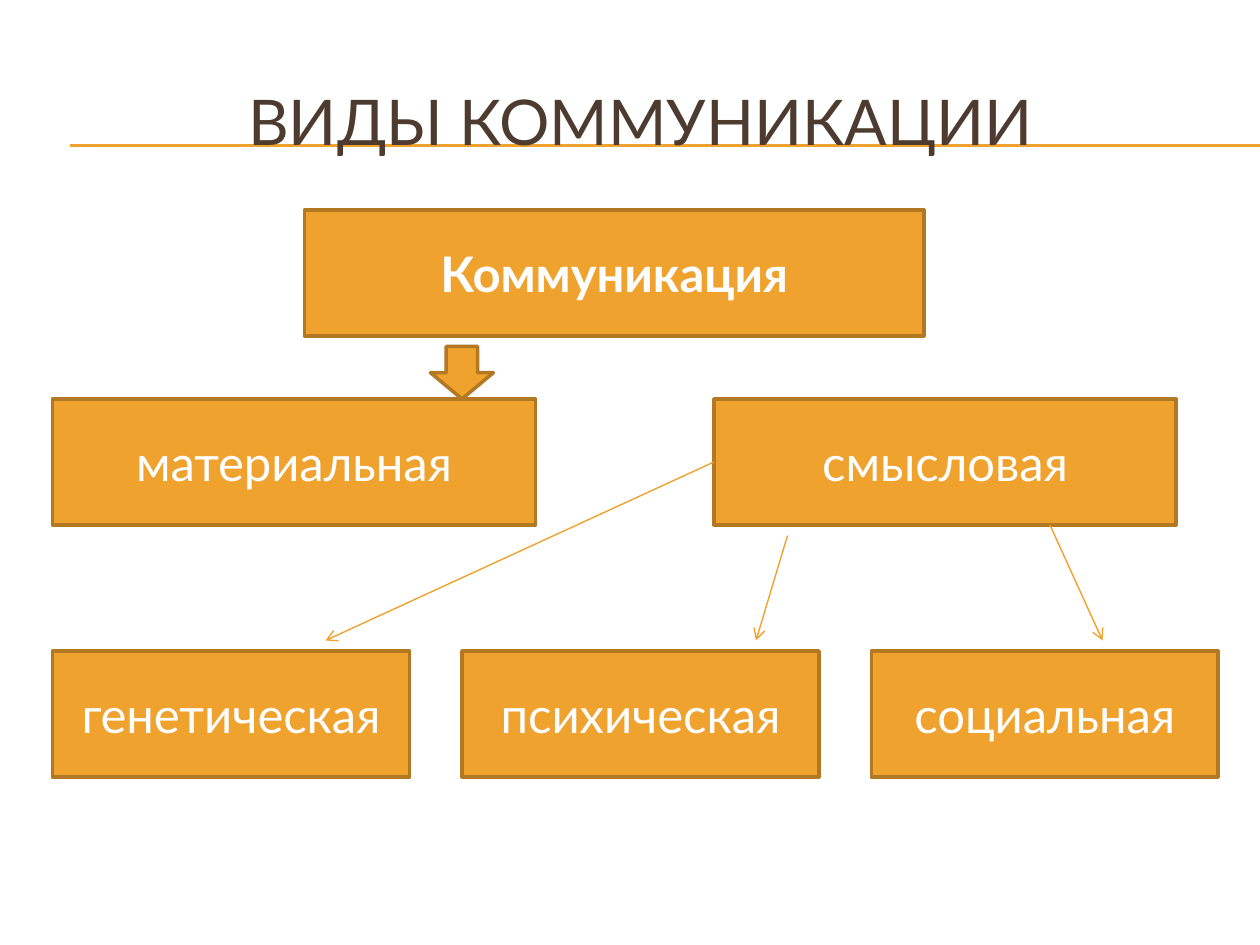
from dataclasses import dataclass

from lxml import etree
from pptx import Presentation
from pptx import util as u
from pptx.dml.color import RGBColor
from pptx.enum import shapes, text
from pptx.oxml.ns import qn


@dataclass(frozen=True)
class Theme:
    font: str = "Lato"
    accent: RGBColor = RGBColor.from_string("F0A22E")
    outline: RGBColor = RGBColor.from_string("B27822")
    heading: RGBColor = RGBColor.from_string("4E3B30")
    light: RGBColor = RGBColor.from_string("FFFFFF")
    title_size: float = 36
    label_size: float = 28
    outline_width: float = 2
    rule_width: float = 0.75
    arrow_width: float = 0.79


@dataclass(frozen=True)
class Box:
    column: float
    row: float
    columns: float
    rows: float = 12
    label: str = ""
    bold: bool = False
    kind: shapes.MSO_SHAPE = shapes.MSO_SHAPE.RECTANGLE


@dataclass(frozen=True)
class Link:
    start: tuple[float, float]
    end: tuple[float, float]


THEME = Theme()
CELLS_PER_INCH = 12
COLUMNS, ROWS = 120, 90
TITLE = Box(4, 6, 114, 11, "ВИДЫ КОММУНИКАЦИИ")
RULES = [Link((6.7, row), (COLUMNS, row)) for row in (13.8, 13.9)]
BOXES = [
    Box(29, 20, 59, label="Коммуникация", bold=True),
    Box(68, 38, 44, label="смысловая"),
    Box(5, 38, 46, label="материальная"),
    Box(83, 62, 33, label="социальная"),
    Box(44, 62, 34, label="психическая"),
    Box(5, 62, 34, label="генетическая"),
    Box(41, 33, 6, 5, kind=shapes.MSO_SHAPE.DOWN_ARROW),
]
ARROWS = [
    Link((68, 44), (31, 61)),
    Link((75, 51), (72, 61)),
    Link((100, 50), (105, 61)),
]


def grid(cells: float) -> u.Length:
    return u.Inches(cells / CELLS_PER_INCH)


def place(box: Box) -> list[u.Length]:
    return [grid(cells) for cells in (box.column, box.row, box.columns, box.rows)]


def write(shape, box: Box, size: float, color: RGBColor) -> None:
    frame = shape.text_frame
    frame.word_wrap = True
    frame.vertical_anchor = text.MSO_ANCHOR.MIDDLE
    paragraph = frame.paragraphs[0]
    paragraph.alignment = text.PP_ALIGN.CENTER
    run = paragraph.add_run()
    run.text = box.label
    style = {"name": THEME.font, "size": u.Pt(size), "bold": box.bold}
    for name, value in style.items():
        setattr(run.font, name, value)
    run.font.color.rgb = color


def draw_box(slide, box: Box) -> None:
    shape = slide.shapes.add_shape(box.kind, *place(box))
    shape.shadow.inherit = False
    shape.fill.solid()
    shape.fill.fore_color.rgb = THEME.accent
    shape.line.color.rgb = THEME.outline
    shape.line.width = u.Pt(THEME.outline_width)
    if box.label:
        write(shape, box, THEME.label_size, THEME.light)


def draw_link(slide, link: Link, width: float, arrow: bool = False) -> None:
    ends = [grid(cells) for cells in (*link.start, *link.end)]
    connector = slide.shapes.add_connector(shapes.MSO_CONNECTOR.STRAIGHT, *ends)
    connector.line.color.rgb = THEME.accent
    connector.line.width = u.Pt(width)
    properties = connector._element.spPr
    if arrow:
        etree.SubElement(properties.find(qn("a:ln")), qn("a:tailEnd"), type="arrow")
    etree.SubElement(properties, qn("a:effectLst"))


def main() -> None:
    presentation = Presentation()
    presentation.slide_width = grid(COLUMNS)
    presentation.slide_height = grid(ROWS)
    slide = presentation.slides.add_slide(presentation.slide_layouts[6])
    for rule in RULES:
        draw_link(slide, rule, THEME.rule_width)
    title = slide.shapes.add_textbox(*place(TITLE))
    write(title, TITLE, THEME.title_size, THEME.heading)
    for box in BOXES:
        draw_box(slide, box)
    for arrow in ARROWS:
        draw_link(slide, arrow, THEME.arrow_width, arrow=True)
    presentation.save("out.pptx")


if __name__ == "__main__":
    main()
